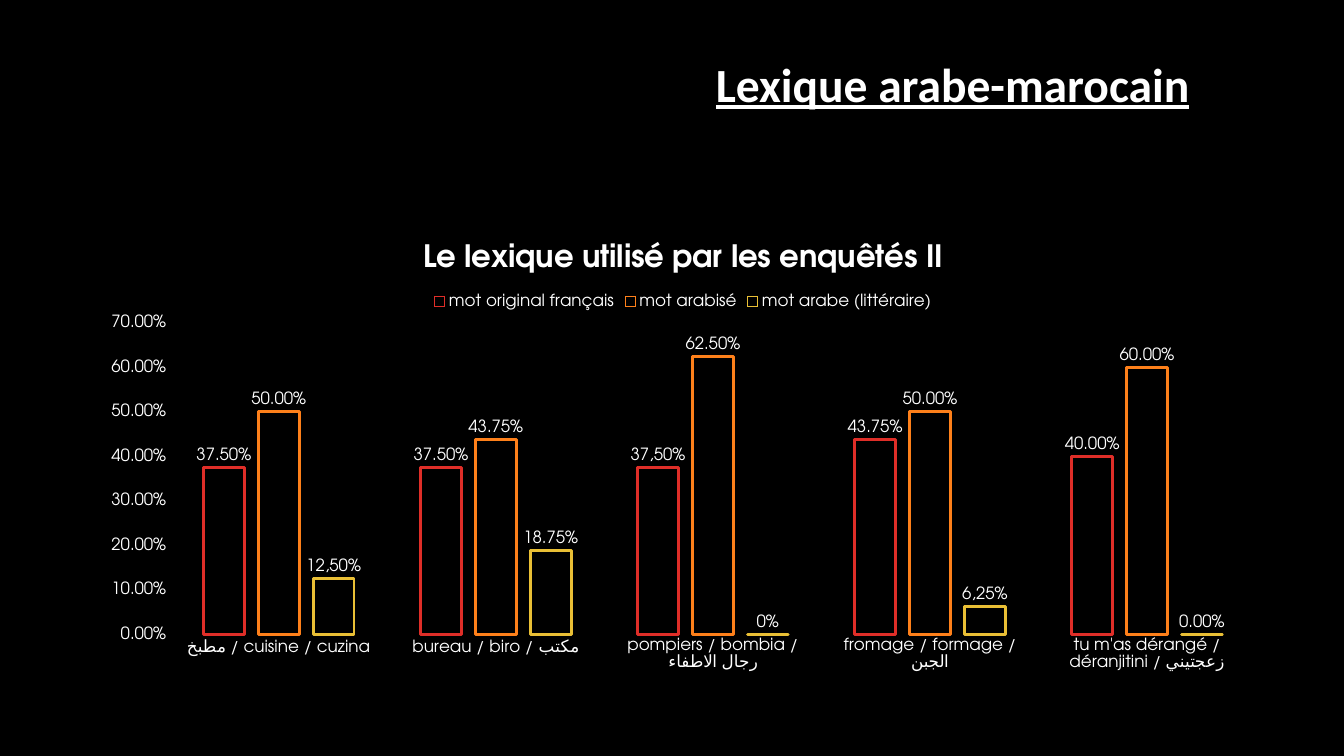
import pptx
import pptx.chart.data
import pptx.dml.color
import pptx.enum.chart
import pptx.enum.text
import pptx.util
from lxml import etree

Pt = pptx.util.Pt
RGB = pptx.dml.color.RGBColor.from_string
xl = pptx.enum.chart

THEME = {
    "back": "000000",
    "lines": ["DF2E28", "FE801A", "E9BF35"],
    "heading": {"name": "Calibri", "size": Pt(34), "bold": True, "underline": True},
    "chart_title": {"name": "TeX Gyre Adventor", "size": Pt(22), "bold": True},
    "labels": {"name": "TeX Gyre Adventor", "size": Pt(12), "bold": False},
    "text": "FFFFFF",
}


def set_font(font, style):
    for key, value in THEME[style].items():
        setattr(font, key, value)
    font.color.rgb = RGB(THEME["text"])


prs = pptx.Presentation()
prs.slide_width, prs.slide_height = Pt(960), Pt(540)
s = prs.slides.add_slide(prs.slide_layouts[6])
s.background.fill.solid()
s.background.fill.fore_color.rgb = RGB(THEME["back"])

# Heading
sp = s.shapes.add_textbox(Pt(480), Pt(35.5), Pt(401), Pt(70.5))
tf = sp.text_frame
tf.word_wrap = True
tf.auto_size = pptx.enum.text.MSO_AUTO_SIZE.SHAPE_TO_FIT_TEXT
p = tf.paragraphs[0]
p.alignment = pptx.enum.text.PP_ALIGN.CENTER
r = p.add_run()
r.text = "Lexique arabe-marocain"
set_font(r.font, "heading")

# Chart data
data = pptx.chart.data.CategoryChartData(number_format="0.00%")
data.categories = [
    "مطبخ / cuisine / cuzina",
    "bureau / biro / مكتب",
    "pompiers / bombia / رجال الاطفاء",
    "fromage / formage / الجبن",
    "tu m'as dérangé / déranjitini / زعجتيني",
]
data.add_series("mot original français", [0.375, 0.375, 0.375, 0.4375, 0.4])
data.add_series("mot arabisé", [0.5, 0.4375, 0.625, 0.5, 0.6])
data.add_series("mot arabe (littéraire)", [0.125, 0.1875, 0, 0.0625, 0])
custom_labels = [{2: "37,50%"}, {}, {0: "12,50%", 2: "0%", 3: "6,25%"}]

chart = s.shapes.add_chart(
    xl.XL_CHART_TYPE.COLUMN_CLUSTERED, Pt(62), Pt(158.5), Pt(852), Pt(327.5), data
).chart
set_font(chart.font, "labels")

# Chart title and legend
chart.has_title = True
p = chart.chart_title.text_frame.paragraphs[0]
r = p.add_run()
r.text = "Le lexique utilisé par les enquêtés II"
set_font(r.font, "chart_title")
chart.has_legend = True
chart.legend.position = xl.XL_LEGEND_POSITION.TOP
chart.legend.include_in_layout = False
set_font(chart.legend.font, "labels")

# Axes
for axis in (chart.category_axis, chart.value_axis):
    axis.has_major_gridlines = False
    axis.major_tick_mark = axis.minor_tick_mark = xl.XL_TICK_MARK.NONE
    axis.format.line.fill.background()
    set_font(axis.tick_labels.font, "labels")
for key, value in {"minimum_scale": 0, "maximum_scale": 0.7, "major_unit": 0.1}.items():
    setattr(chart.value_axis, key, value)
chart.value_axis.tick_labels.number_format = "0.00%"
chart.value_axis.tick_labels.number_format_is_linked = False

# Outlined columns with their value labels
plot = chart.plots[0]
for key, value in {"gap_width": 164, "overlap": -35, "vary_by_categories": False}.items():
    setattr(plot, key, value)
for series, color, custom in zip(plot.series, THEME["lines"], custom_labels):
    series.invert_if_negative = False
    series.format.fill.background()
    series.format.line.color.rgb = RGB(color)
    series.format.line.width = Pt(2)
    labels = series.data_labels
    for key, value in {
        "show_value": True,
        "number_format": "0.00%",
        "number_format_is_linked": False,
        "position": xl.XL_LABEL_POSITION.OUTSIDE_END,
    }.items():
        setattr(labels, key, value)
    set_font(labels.font, "labels")
    for index, text in custom.items():
        label = series.points[index].data_label
        r = label.text_frame.paragraphs[0].add_run()
        r.text = text
        set_font(r.font, "labels")
        label.position = xl.XL_LABEL_POSITION.OUTSIDE_END

# Fixed plot area, as shares of the chart
area = chart.plots[0]._element.getparent()
ns = etree.QName(area).namespace
for old in area.findall(f"{{{ns}}}layout"):
    area.remove(old)
layout = etree.Element(f"{{{ns}}}layout")
manual = etree.SubElement(layout, f"{{{ns}}}manualLayout")
for tag, value in {
    "layoutTarget": "inner", "xMode": "edge", "yMode": "edge",
    "x": 0.07, "y": 0.22, "w": 0.91, "h": 0.68,
}.items():
    etree.SubElement(manual, f"{{{ns}}}{tag}").set("val", str(value))
area.insert(0, layout)

prs.save("out.pptx")
